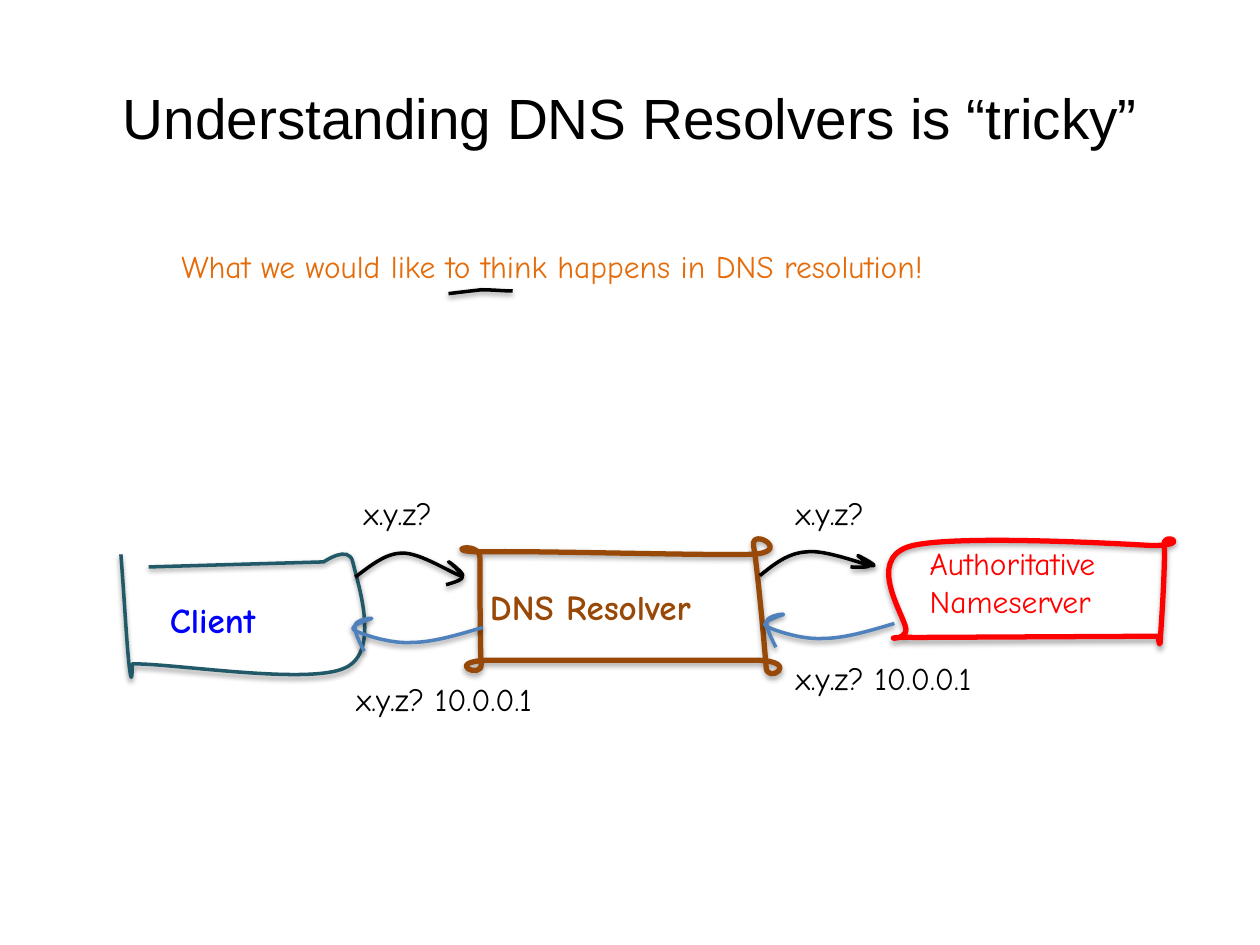
import lxml.etree
import pptx
import pptx.dml.color
import pptx.enum.text
import pptx.oxml.ns
import pptx.util

Pt = pptx.util.Pt
qn = pptx.oxml.ns.qn
SubElement = lxml.etree.SubElement

presentation = pptx.Presentation()
presentation.slide_width, presentation.slide_height = Pt(720), Pt(540)
slide = presentation.slides.add_slide(presentation.slide_layouts[6])


def add_text(text, left, top, width, height, size=18, color="000000", font="Comic Neue",
             bold=False, wrap=False, align=pptx.enum.text.PP_ALIGN.LEFT,
             anchor=pptx.enum.text.MSO_ANCHOR.TOP,
             auto_size=pptx.enum.text.MSO_AUTO_SIZE.SHAPE_TO_FIT_TEXT):
    shape = slide.shapes.add_textbox(Pt(left), Pt(top), Pt(width), Pt(height))
    frame = shape.text_frame
    frame.text = text
    frame.word_wrap = wrap
    frame.auto_size = auto_size
    frame.vertical_anchor = anchor
    for paragraph in frame.paragraphs:
        paragraph.alignment = align
        run_font = paragraph.runs[0].font
        run_font.name, run_font.size, run_font.bold = font, Pt(size), bold
        run_font.color.rgb = pptx.dml.color.RGBColor.from_string(color)


def add_sketch(box, start, segments, color="000000", weight=2, closed=False, shift=(0, 0)):
    """Draw an outline in box; six numbers are a cubic Bezier segment, two a straight one."""
    left, top, width, height = box
    origin = left + shift[0], top + shift[1]
    builder = slide.shapes.build_freeform(Pt(origin[0]), Pt(origin[1]), scale=1)
    builder.add_line_segments([(Pt(origin[0] + width), Pt(origin[1] + height))], close=False)
    shape = builder.convert_to_shape()

    # The builder only knows straight lines, so the curves are written as XML.
    outline = next(shape._element.iter(qn("a:path")))
    for child in list(outline):
        outline.remove(child)
    for index, numbers in enumerate([start, *segments]):
        tag = "a:moveTo" if index == 0 else "a:lnTo" if len(numbers) == 2 else "a:cubicBezTo"
        command = SubElement(outline, qn(tag))
        for x, y in zip(numbers[::2], numbers[1::2]):
            SubElement(command, qn("a:pt"), x=str(Pt(x - left)), y=str(Pt(y - top)))
    if closed:
        SubElement(outline, qn("a:close"))

    shape.fill.background()
    shape.line.color.rgb = pptx.dml.color.RGBColor.from_string(color)
    shape.line.width = Pt(weight)
    shape.shadow.inherit = False
    effects = shape._element.spPr.find(qn("a:effectLst"))
    shadow = SubElement(effects, qn("a:outerShdw"), blurRad=str(Pt(3.1)),
                        dist=str(Pt(1.8 if weight == 3 else 1.6)), dir="5400000",
                        rotWithShape="0")
    shadow_color = SubElement(shadow, qn("a:srgbClr"), val="000000")
    SubElement(shadow_color, qn("a:alpha"), val="35000" if weight == 3 else "38000")


# Heading and underlined tagline
add_text("Understanding DNS Resolvers is “tricky”", 36, 21.6, 648, 90, size=32.4, font="Arial",
         wrap=True, align=pptx.enum.text.PP_ALIGN.CENTER,
         anchor=pptx.enum.text.MSO_ANCHOR.MIDDLE,
         auto_size=pptx.enum.text.MSO_AUTO_SIZE.NONE)
add_text("What we would like to think happens in DNS resolution!", 96.5, 137.5, 553, 28.8,
         color="E46C0A")
add_sketch((256.3, 165.6, 36.7, 2.2), (256.3, 167.8), [
    (262.8, 167, 269.3, 166.3, 275, 165.6),
    (281.5, 165.6, 287.3, 166.3, 293, 166.3)])

# Client
add_text("Client", 90, 338.4, 79.9, 31.7, size=20, color="0000FF", bold=True)
add_sketch((69.1, 316.1, 139.7, 70.6), (69.1, 316.8), [
    (71.3, 344.9, 72.7, 373, 74.2, 383),
    (75.6, 393.8, 75.6, 379.4, 75.6, 379.4),
    (96.5, 378.7, 176.4, 391.7, 197.3, 381.6),
    (218.2, 372.2, 203.8, 331.2, 201.6, 321.1),
    (199.4, 311, 185, 321.1, 185, 321.1),
    (85, 324)], color="215968")

# DNS resolver
add_text("DNS Resolver", 272.9, 331.2, 164.9, 31.7, size=20, color="984807", bold=True)
add_sketch((264.2, 308.2, 181.4, 77), (275, 379.4), [
    (275.8, 388.8, 252.7, 378, 279.4, 377.3),
    (305.3, 377.3, 406.1, 377.3, 432.7, 377.3),
    (458.6, 378, 437.8, 391.7, 437.8, 380.9),
    (437, 370.1, 432.7, 322.6, 430.6, 311.8),
    (429.1, 301, 454.3, 316.1, 428.4, 316.8),
    (402.5, 317.5, 301.7, 314.6, 275.8, 315.4),
    (249.8, 315.4, 274.3, 308.2, 274.3, 319),
    (274.3, 329.8, 274.3, 369.4, 275, 379.4)], color="984807", weight=3, closed=True)

# Query to the resolver
add_text("x.y.z?", 200.9, 278.6, 62.6, 28.8)
add_sketch((203, 316.1, 61.2, 18), (203, 329.8), [
    (211.7, 323.3, 220.3, 316.1, 229.7, 316.1),
    (239.8, 315.4, 259.2, 328.3, 263.5, 329),
    (267.8, 329.8, 256.3, 320.4, 256.3, 321.1),
    (257, 321.1, 264.2, 327.6, 264.2, 329.8),
    (264.2, 331.9, 254.9, 334.1, 254.9, 334.1)])

# Authoritative nameserver and the query to it
add_text("Authoritative\nNameserver", 524.2, 307.4, 134.6, 51.1, color="FF0000")
add_text("x.y.z?", 447.8, 278.6, 62.6, 28.8)
add_sketch((508.3, 307.4, 162.7, 59.8), (519.1, 312.5), [
    (542.9, 304.6, 658.1, 311.8, 658.1, 311.8),
    (682.6, 311.8, 663.8, 303.1, 665.3, 311.8),
    (666, 320.4, 663.8, 355.7, 663.1, 364.3),
    (663.1, 373, 661.7, 363.6, 661.7, 363.6),
    (522.7, 364.3),
    (498.2, 363.6, 518.4, 367.9, 517.7, 359.3),
    (516.2, 350.6, 495.4, 320.4, 519.1, 312.5)], color="FF0000", weight=3, closed=True)
add_sketch((434.2, 314.6, 65.5, 14.4), (434.2, 329), [
    (442.1, 322.6, 450, 316.1, 460.8, 315.4),
    (471.6, 313.9, 493.2, 322.6, 498.2, 323.3),
    (503.3, 324, 490.3, 317.5, 490.3, 317.5),
    (489.6, 317.5, 497.5, 322.6, 496.8, 323.3),
    (496.1, 324.7, 486, 324, 486, 324)])

# Replies, from the nameserver and from the resolver
for shift in ((235.3, -2.3), (0, 0)):
    add_sketch((201.6, 352.8, 74.2, 19.4), (275.8, 358.6), [
        (261.4, 362.9, 247, 367.2, 234.7, 367.2),
        (222.5, 367.9, 205.9, 362.2, 202.3, 360),
        (198.7, 357.8, 212.4, 353.5, 212.4, 353.5),
        (212.4, 352.8, 203.8, 354.2, 203, 357.1),
        (202.3, 360.7, 205.2, 366.5, 208.1, 372.2)], color="4F81BD", shift=shift)
for left, top in ((447.8, 373), (196.6, 385.2)):
    add_text("x.y.z? 10.0.0.1", left, top, 134.6, 28.8)

presentation.save("out.pptx")
